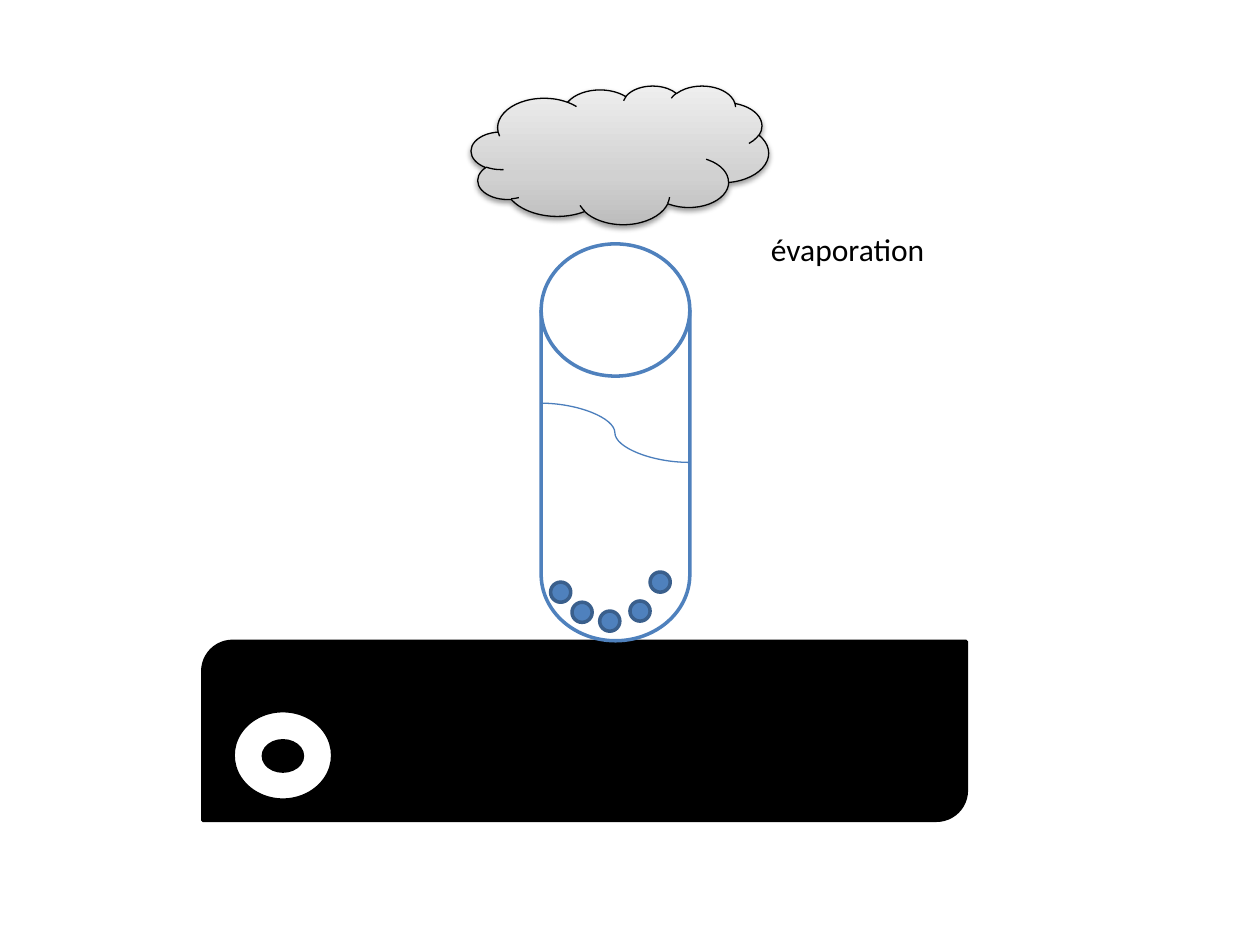
"""Build a slide showing evaporation from a heated test tube."""
from typing import NamedTuple

from lxml import etree
from pptx import Presentation
from pptx.dml.color import RGBColor
from pptx.enum.shapes import MSO_CONNECTOR, MSO_SHAPE
from pptx.enum.text import MSO_AUTO_SIZE
from pptx.oxml import parse_xml
from pptx.oxml.ns import nsdecls, qn
from pptx.util import Emu, Inches, Pt

OVAL = MSO_SHAPE.OVAL
PLATE = MSO_SHAPE.ROUND_2_DIAG_RECTANGLE
DRUM = MSO_SHAPE.FLOWCHART_DIRECT_ACCESS_STORAGE
CLOUD = MSO_SHAPE.CLOUD
CURVE = MSO_CONNECTOR.CURVE
FIT_TEXT = MSO_AUTO_SIZE.SHAPE_TO_FIT_TEXT

BLACK = RGBColor(0x00, 0x00, 0x00)
WHITE = RGBColor(0xFF, 0xFF, 0xFF)
BLUE = RGBColor(0x4F, 0x81, 0xBD)
DARK_BLUE = RGBColor(0x3A, 0x5F, 0x8C)
LIQUID_BLUE = RGBColor(0x4B, 0x7E, 0xBC)
CLOUD_STOPS = (
    (0, RGBColor(0xBD, 0xBD, 0xBD)),
    (35, RGBColor(0xD1, 0xD1, 0xD1)),
    (100, RGBColor(0xEE, 0xEE, 0xEE)),
)

SLIDE_W, SLIDE_H = Inches(10), Inches(7.5)
COLUMN, ROW = SLIDE_W / 10, SLIDE_H / 7.5
STONE_SIZE = 0.16
STONES = ((4.37, 4.62), (4.54, 4.78), (4.76, 4.85), (5, 4.77), (5.16, 4.54))


class Box(NamedTuple):
    """Hold a position and size in grid columns and rows."""

    col: float
    row: float
    cols: float
    rows: float

    def lengths(self) -> tuple[Emu, ...]:
        """Return the box as slide lengths."""
        units = (COLUMN, ROW, COLUMN, ROW)
        return tuple(Emu(round(n * unit)) for n, unit in zip(self, units))


class Part(NamedTuple):
    """Describe one shape of the apparatus."""

    kind: MSO_SHAPE
    box: Box
    fill: RGBColor
    line: RGBColor
    width: float = 2
    rotation: float = 0


PARTS = (
    Part(PLATE, Box(1.61, 5.09, 6.06, 1.42), BLACK, BLACK),
    Part(OVAL, Box(1.85, 5.64, 0.79, 0.71), WHITE, BLACK),
    Part(OVAL, Box(2.09, 5.88, 0.31, 0.24), BLACK, BLACK),
    Part(DRUM, Box(3.31, 2.92, 3.15, 1.18), WHITE, BLUE, rotation=270),
    *(Part(OVAL, Box(x, y, STONE_SIZE, STONE_SIZE), BLUE, DARK_BLUE) for x, y in STONES),
)
VAPOUR = Part(CLOUD, Box(3.74, 0.68, 2.36, 1.1), WHITE, BLACK, 0.75)
LIQUID = Box(4.29, 3.2, 1.18, 0.47)
LABEL = Box(6.02, 1.78, 3.62, 0.4)


def add_part(slide, part: Part):
    """Draw a part without a shadow and return its shape."""
    s = slide.shapes.add_shape(part.kind, *part.box.lengths())
    s.shadow.inherit = False
    s.rotation = part.rotation
    s.fill.solid()
    s.fill.fore_color.rgb = part.fill
    s.line.color.rgb = part.line
    s.line.width = Pt(part.width)
    return s


def add_cloud(slide, part: Part) -> None:
    """Draw the vapour cloud with its gradient and soft shadow."""
    s = add_part(slide, part)
    s.fill.gradient()
    s.fill.gradient_angle = 90
    stops = s._element.spPr.find(f".//{qn('a:gsLst')}")
    for stop in list(stops):
        stops.remove(stop)
    for share, color in CLOUD_STOPS:
        stop = etree.SubElement(stops, qn("a:gs"), pos=str(share * 1000))
        etree.SubElement(stop, qn("a:srgbClr"), val=str(color))
    s._element.spPr.find(qn("a:effectLst")).append(parse_xml(
        f'<a:outerShdw {nsdecls("a")} blurRad="{Pt(3.1)}" dist="{Pt(1.6)}" '
        'dir="5400000" rotWithShape="0">'
        f'<a:srgbClr val="{BLACK}"><a:alpha val="38000"/></a:srgbClr></a:outerShdw>'
    ))


def add_liquid(slide, box: Box) -> None:
    """Draw the curved surface of the liquid."""
    left, top, width, height = box.lengths()
    s = slide.shapes.add_connector(CURVE, left, top, left + width, top + height)
    s.line.color.rgb = LIQUID_BLUE
    s.line.width = Pt(0.75)
    etree.SubElement(s._element.spPr, qn("a:effectLst"))


def add_label(slide, box: Box, text: str) -> None:
    """Write a label in a text box that fits its text."""
    tf = slide.shapes.add_textbox(*box.lengths()).text_frame
    tf.word_wrap = True
    tf.auto_size = FIT_TEXT
    r = tf.paragraphs[0].add_run()
    r.text = text
    for name, value in {"name": "Calibri", "size": Pt(18)}.items():
        setattr(r.font, name, value)
    r.font.color.rgb = BLACK


def main() -> None:
    """Build and save the slide."""
    prs = Presentation()
    prs.slide_width, prs.slide_height = SLIDE_W, SLIDE_H
    slide = prs.slides.add_slide(prs.slide_layouts[6])
    for part in PARTS:
        add_part(slide, part)
    add_cloud(slide, VAPOUR)
    add_liquid(slide, LIQUID)
    add_label(slide, LABEL, "évaporation")
    prs.save("out.pptx")


if __name__ == "__main__":
    main()
